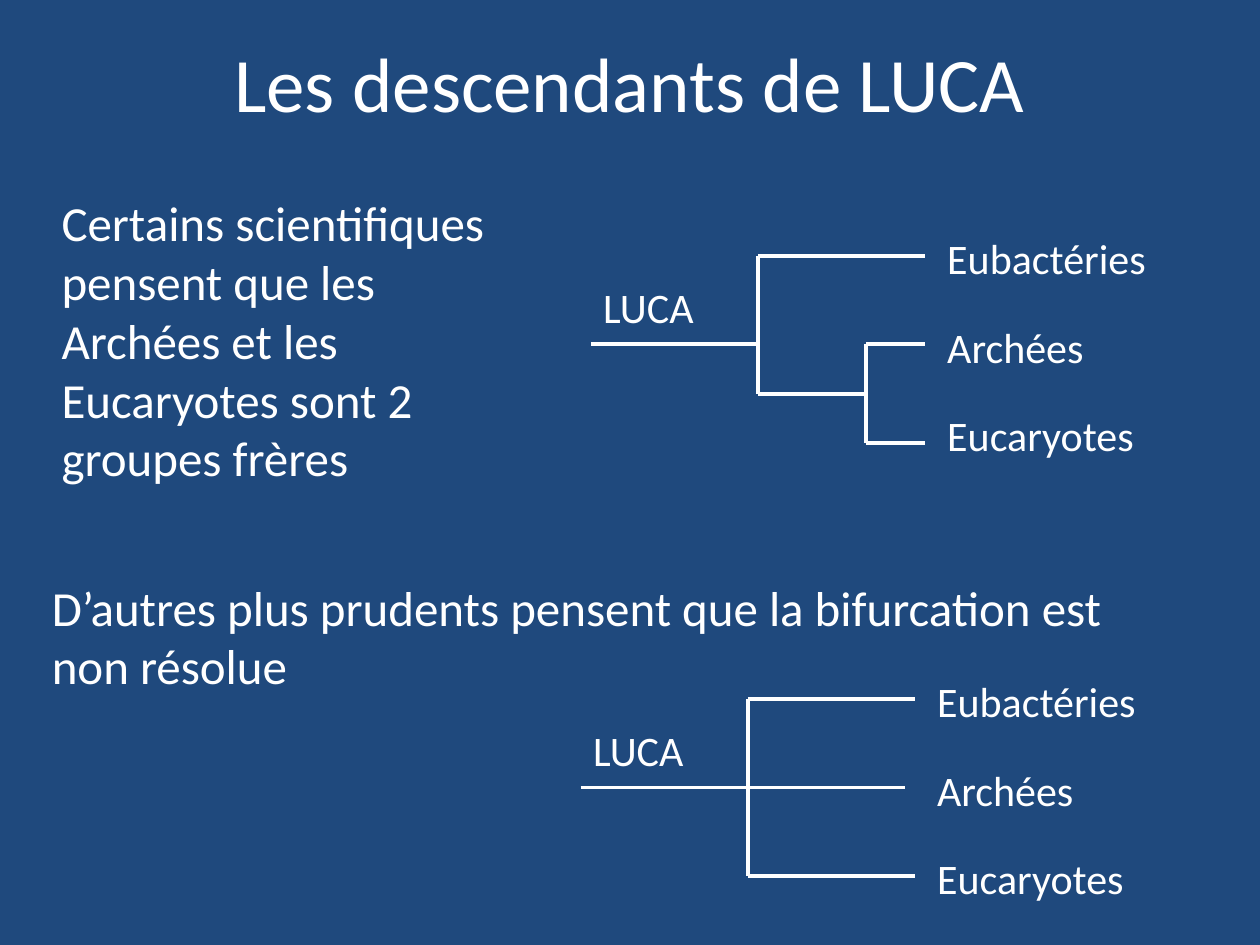
from lxml.etree import SubElement
from pptx import Presentation
from pptx.dml.color import RGBColor
from pptx.enum.shapes import MSO_CONNECTOR as Connector
from pptx.enum.text import MSO_AUTO_SIZE as AutoSize, PP_ALIGN as Align
from pptx.oxml.ns import qn
from pptx.util import Pt


def color(value):
    """Turn a hex string into a colour."""
    return RGBColor.from_string(value)


class Page:
    """Hold the style and the current slide, and draw its elements."""

    ink = "FFFFFF"
    ground = "1F497D"
    font = "Calibri"
    stroke = 2.25

    def __init__(self, deck):
        """Add a blank slide with a plain background."""
        self.slide = deck.slides.add_slide(deck.slide_layouts[6])
        fill = self.slide.background.fill
        fill.solid()
        fill.fore_color.rgb = color(self.ground)

    def text(self, words, left, top, width, height, size, align=Align.LEFT):
        """Write one paragraph in a wrapping box."""
        box = self.slide.shapes.add_textbox(Pt(left), Pt(top), Pt(width), Pt(height))
        frame = box.text_frame
        for name, value in {"word_wrap": True, "auto_size": AutoSize.SHAPE_TO_FIT_TEXT}.items():
            setattr(frame, name, value)
        para = frame.paragraphs[0]
        para.alignment = align
        span = para.add_run()
        span.text = words
        for name, value in {"name": self.font, "size": Pt(size)}.items():
            setattr(span.font, name, value)
        span.font.color.rgb = color(self.ink)

    def line(self, x1, y1, x2, y2):
        """Draw a straight line without a shadow."""
        line = self.slide.shapes.add_connector(
            Connector.STRAIGHT, Pt(x1), Pt(y1), Pt(x2), Pt(y2))
        line.line.width = Pt(self.stroke)
        line.line.color.rgb = color(self.ink)
        SubElement(line._element.spPr, qn("a:effectLst"))

    def tree(self, left, root, branches):
        """Draw a tree whose branches are relative to the start of its root."""
        for x1, y1, x2, y2 in branches:
            self.line(left + x1, root + y1, left + x2, root + y2)
        self.text("LUCA", left, root - 39.4, 84, 36, 24)
        tips = {"Eubactéries": 135, "Archées": 96, "Eucaryotes": 135}
        for row, (name, width) in enumerate(tips.items()):
            self.text(name, left + 196.6, root - 67.4 + 50.6 * row, width, 36, 24)


def main():
    """Build the slide and save it."""
    deck = Presentation()
    deck.slide_width, deck.slide_height = Pt(720), Pt(540)
    page = Page(deck)
    page.text("Les descendants de LUCA", 0, 16.5, 720, 60.5, 44, Align.CENTER)
    page.text("Certains scientifiques pensent que les Archées et les Eucaryotes "
              "sont 2 groupes frères", 28.1, 106.5, 286.5, 177, 28)
    page.text("D’autres plus prudents pensent que la bifurcation est non résolue",
              22.5, 326.2, 652, 75, 28)

    fork, inner, tip, rise, low = 95.6, 157.5, 191.2, 50.5, 28.2
    trunk = [(0, 0, fork, 0), (fork, -rise, tip, -rise)]
    sisters = [(fork, -rise, fork, low), (fork, low, inner, low),
               (inner, 2 * low, inner, 0), (inner, 0, tip, 0),
               (inner, 2 * low, tip, 2 * low)]
    unresolved = [(fork, -rise, fork, rise), (90, 0, 185.6, 0),
                  (fork, rise, tip, rise)]
    page.tree(337.6, 196.8, trunk + sisters)
    page.tree(331.8, 450, trunk + unresolved)
    deck.save("out.pptx")


if __name__ == "__main__":
    main()
